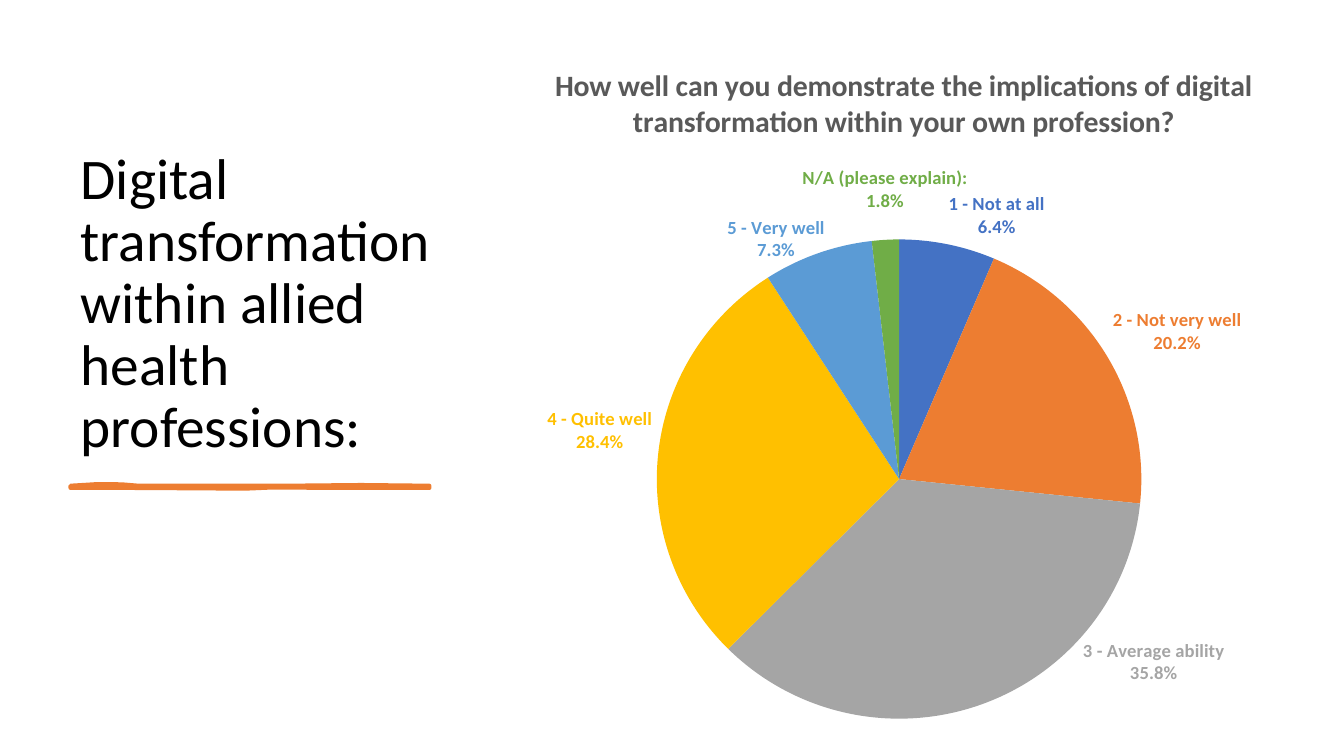
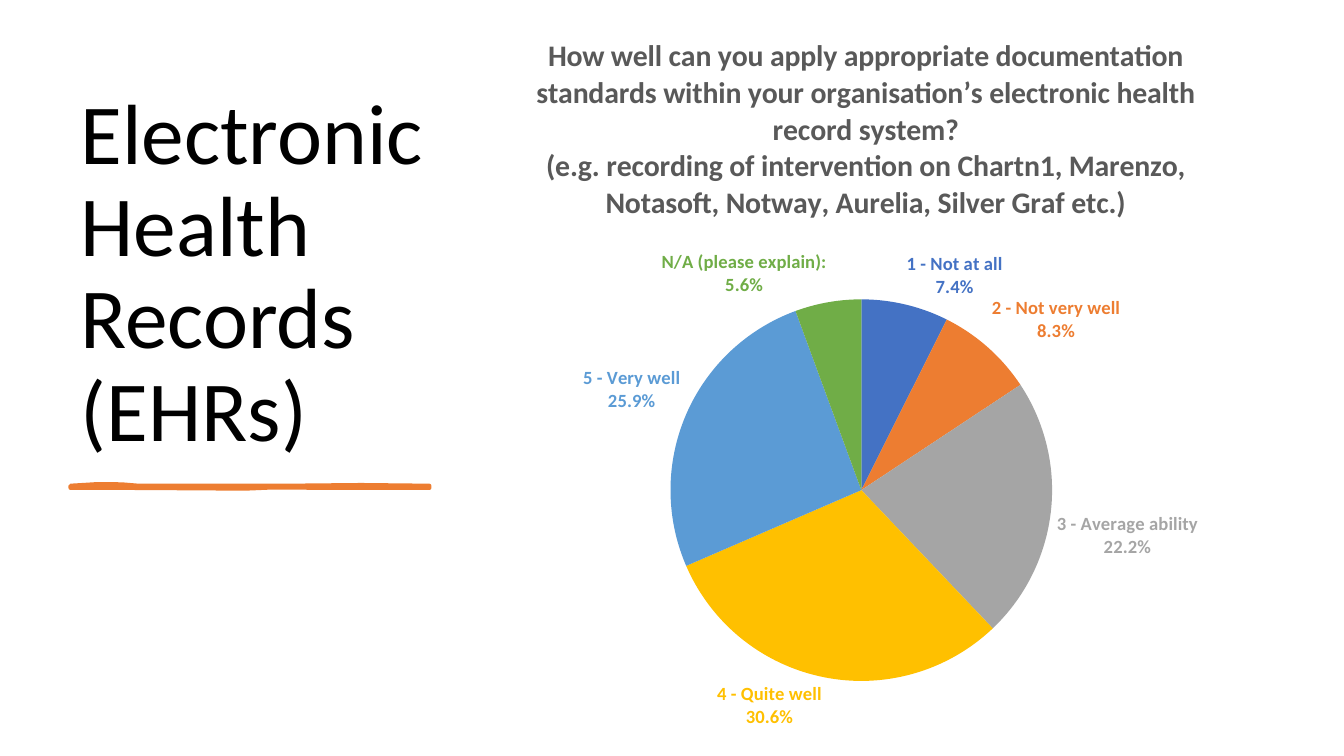
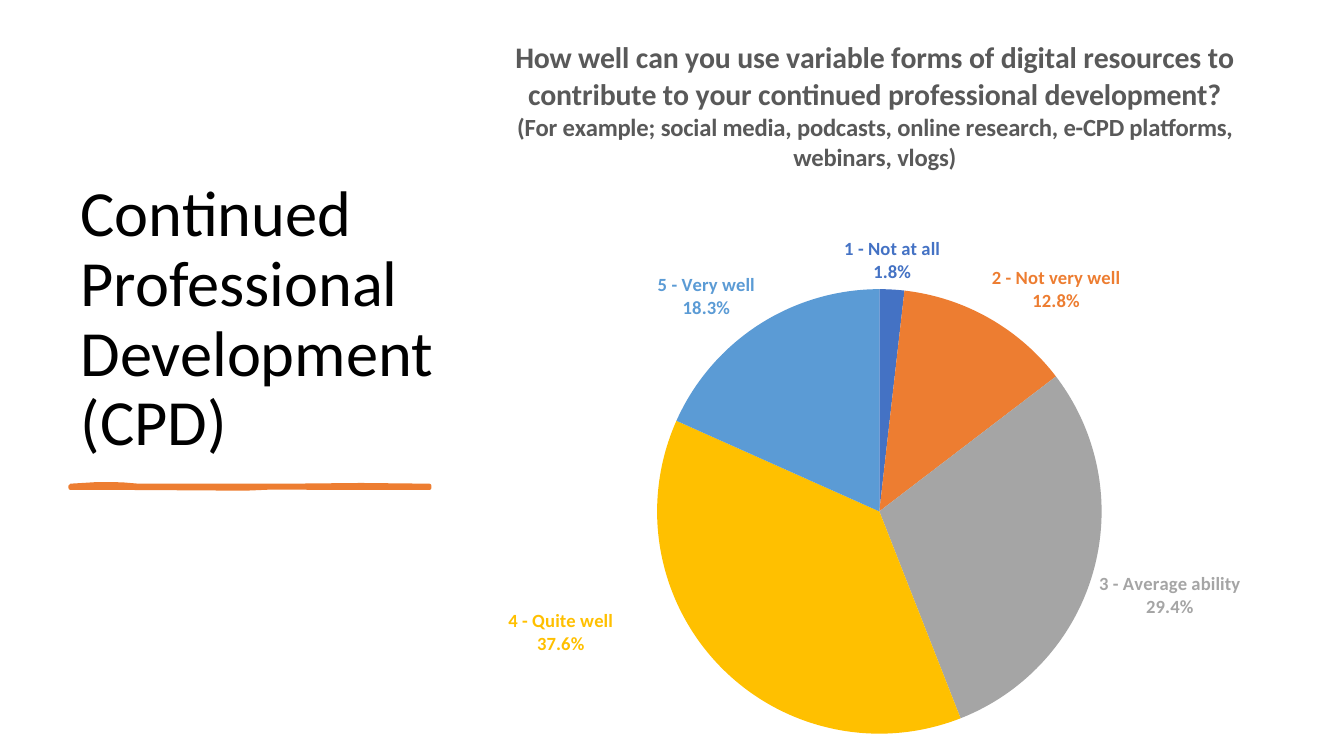
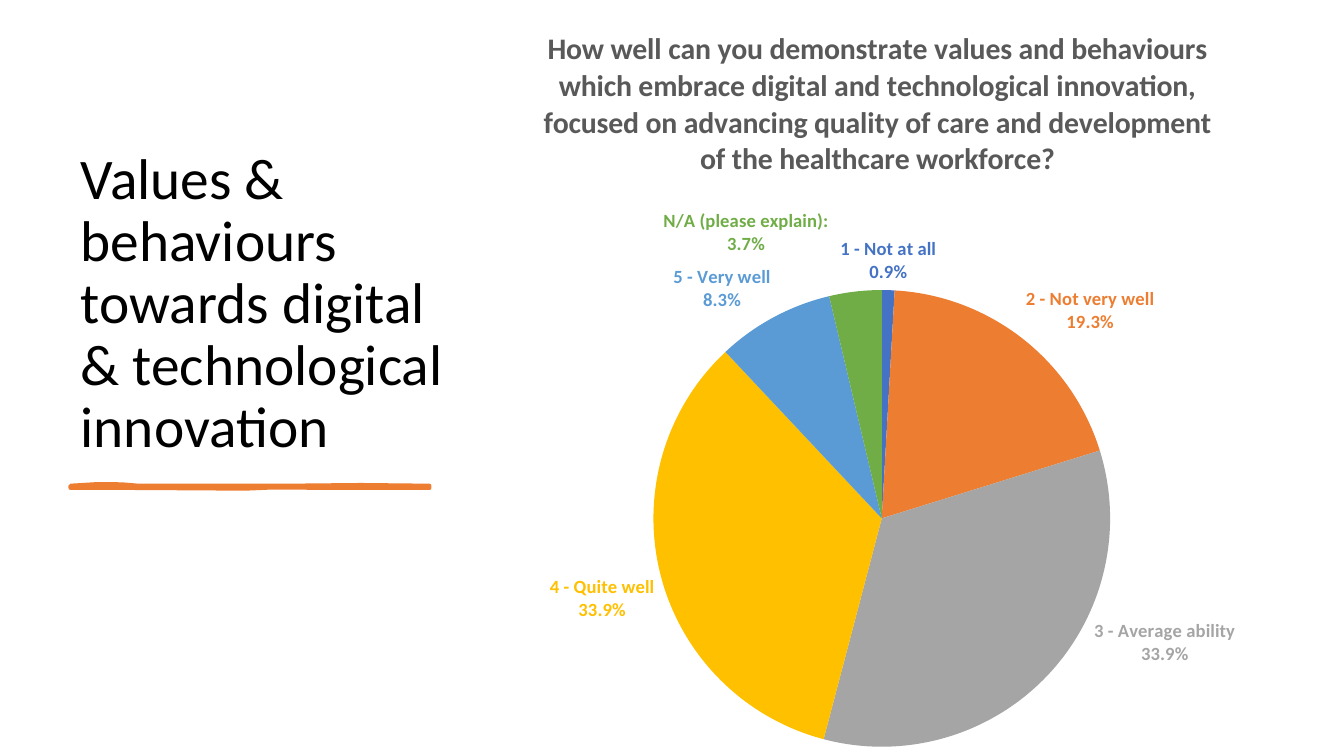
from lxml import etree
from pptx import Presentation
from pptx import util as u
from pptx.chart.data import CategoryChartData
from pptx.dml.color import RGBColor
from pptx.enum import chart as kinds, text
from pptx.oxml import parse_xml
from pptx.oxml.ns import nsdecls, qn

FONT = "Calibri"
BLACK = RGBColor(0x00, 0x00, 0x00)
GREY = RGBColor(0x59, 0x59, 0x59)
BLUE = RGBColor(0x44, 0x72, 0xC4)
ORANGE = RGBColor(0xED, 0x7D, 0x31)
SILVER = RGBColor(0xA5, 0xA5, 0xA5)
GOLD = RGBColor(0xFF, 0xC0, 0x00)
SKY = RGBColor(0x5B, 0x9B, 0xD5)
GREEN = RGBColor(0x70, 0xAD, 0x47)

SCALE = {
    "1 - Not at all": BLUE,
    "2 - Not very well": ORANGE,
    "3 - Average ability": SILVER,
    "4 - Quite well": GOLD,
    "5 - Very well": SKY,
    "N/A (please explain):": GREEN,
}
BIG, SMALL, LABEL = 21.3, 17.6, 13.3

STROKE = [
    (50.4, 347), (70, 345.8), (87, 346), (99, 347), (150, 347),
    (204.5, 347), (258, 346.5), (306.7, 347), (306.7, 348.5),
    (250, 348.5), (194, 348.2), (175, 349), (143, 348.8),
    (95, 348.5), (50.4, 348.5),
]

PAGES = [
    dict(
        head="Digital transformation within allied health professions:",
        size=41,
        asks=[("How well can you demonstrate the implications of digital "
               "transformation within your own profession?", BIG)],
        vals=[0.064, 0.202, 0.358, 0.284, 0.073, 0.018],
        box=(319, 28.8, 653, 511.2),
        plot=(0.23, 0.28, 0.53, 0.68),
        moves={2: (0.11, -0.1), 4: (0.01, 0.02), 5: (0, -0.03)},
    ),
    dict(
        head="Electronic Health Records (EHRs)",
        size=61,
        asks=[("How well can you apply appropriate documentation standards "
               "within your organisation’s electronic health record system?", BIG),
              ("(e.g. recording of intervention on Chartn1, Marenzo, "
               "Notasoft, Notway, Aurelia, Silver Graf etc.)", BIG)],
        vals=[0.074, 0.083, 0.222, 0.306, 0.259, 0.056],
        box=(300.2, 9.4, 636.5, 524.2),
        plot=(0.28, 0.39, 0.43, 0.52),
        moves={},
    ),
    dict(
        head="Continued Professional Development (CPD)",
        size=46,
        asks=[("How well can you use variable forms of digital resources to "
               "contribute to your continued professional development?", BIG),
              ("(For example; social media, podcasts, online research, e-CPD "
               "platforms, webinars, vlogs)", SMALL)],
        vals=[0.018, 0.128, 0.294, 0.376, 0.183, 0],
        box=(296.6, 10.8, 656.6, 529.2),
        plot=(0.26, 0.37, 0.49, 0.6),
        moves={3: (-0.11, -0.08)},
    ),
    dict(
        head="Values & behaviours towards digital & technological innovation",
        size=41,
        asks=[("How well can you demonstrate values and behaviours which "
               "embrace digital and technological innovation, focused on "
               "advancing quality of care and development of the healthcare "
               "workforce?", BIG)],
        vals=[0.009, 0.193, 0.339, 0.339, 0.083, 0.037],
        box=(319, 1.4, 615.6, 538.6),
        plot=(0.24, 0.38, 0.53, 0.61),
        moves={2: (0.05, -0.08), 5: (-0.03, -0.04)},
    ),
]


def style(font, size, color, bold=False):
    font.name = FONT
    font.size = u.Pt(size)
    font.bold = bold
    font.color.rgb = color


def write(par, words, size=LABEL, color=BLACK, bold=False):
    run = par.add_run()
    run.text = words
    style(run.font, size, color, bold)


def place(shape, *box):
    shape.left, shape.top, shape.width, shape.height = map(u.Pt, box)


def title(slide, words, size):
    shape = slide.shapes.title
    place(shape, 50.4, 50.4, 281.5, 281.5)
    frame = shape.text_frame
    frame.auto_size = text.MSO_AUTO_SIZE.NONE
    frame.word_wrap = True
    frame.vertical_anchor = text.MSO_ANCHOR.BOTTOM
    par = frame.paragraphs[0]
    par.alignment = text.PP_ALIGN.LEFT
    par.line_spacing = 0.9
    write(par, words, size=size)


def stroke(slide):
    first, *rest = [(u.Pt(x), u.Pt(y)) for x, y in STROKE]
    pen = slide.shapes.build_freeform(*first)
    pen.add_line_segments(rest, close=True)
    shape = pen.convert_to_shape()
    shape.shadow.inherit = False
    shape.fill.solid()
    shape.fill.fore_color.rgb = ORANGE
    shape.line.color.rgb = ORANGE
    shape.line.width = u.Pt(3)


def layout(parts):
    tags = "".join(f'<c:{tag} val="{val}"/>' for tag, val in parts)
    return parse_xml(f'<c:layout {nsdecls("c")}><c:manualLayout>{tags}'
                     '</c:manualLayout></c:layout>')


def fit(chart, plot):
    area = chart.element.find(".//" + qn("c:plotArea"))
    for old in area.findall(qn("c:layout")):
        area.remove(old)
    modes = [("layoutTarget", "inner"), ("xMode", "edge"), ("yMode", "edge")]
    area.insert(0, layout(modes + list(zip("xywh", plot))))


def label(node, value, move):
    idx = node.find(qn("c:idx"))
    if not value:
        for part in list(node)[1:]:
            node.remove(part)
        etree.SubElement(node, qn("c:delete")).set("val", "1")
        return
    idx.addnext(parse_xml(f'<c:numFmt {nsdecls("c")} formatCode="0.0%" '
                          'sourceLinked="0"/>'))
    if move:
        idx.addnext(layout(zip("xy", move)))
    node.find(qn("c:showCatName")).set("val", "1")
    gap = parse_xml(f'<c:separator {nsdecls("c")}>\n</c:separator>')
    node.find(qn("c:showBubbleSize")).addnext(gap)


def pie(slide, asks, vals, box, plot, moves):
    data = CategoryChartData(number_format="0.0%")
    data.categories = list(SCALE)
    data.add_series("Series 1", vals)
    chart = slide.shapes.add_chart(
        kinds.XL_CHART_TYPE.PIE, *map(u.Pt, box), data).chart
    style(chart.font, LABEL, BLACK)
    chart.has_legend = False
    chart.has_title = True
    frame = chart.chart_title.text_frame
    for num, (words, size) in enumerate(asks):
        par = frame.add_paragraph() if num else frame.paragraphs[0]
        write(par, words, size=size, color=GREY, bold=True)
    fit(chart, plot)
    chart.plots[0].vary_by_categories = True
    points = chart.plots[0].series[0].points
    for num, color in enumerate(SCALE.values()):
        point = points[num]
        point.format.fill.solid()
        point.format.fill.fore_color.rgb = color
        point.format.line.fill.background()
        style(point.data_label.font, LABEL, color, bold=True)
        point.data_label.position = kinds.XL_LABEL_POSITION.OUTSIDE_END
    for num, node in enumerate(chart.element.iter(qn("c:dLbl"))):
        label(node, vals[num], moves.get(num))
    for lead in chart.element.iter(qn("c:showLeaderLines")):
        lead.set("val", "0")


def main():
    deck = Presentation()
    deck.slide_width, deck.slide_height = u.Pt(960), u.Pt(540)
    for page in PAGES:
        slide = deck.slides.add_slide(deck.slide_layouts[5])
        title(slide, page["head"], page["size"])
        stroke(slide)
        pie(slide, *(page[key] for key in ("asks", "vals", "box", "plot", "moves")))
    deck.save("out.pptx")


if __name__ == "__main__":
    main()
